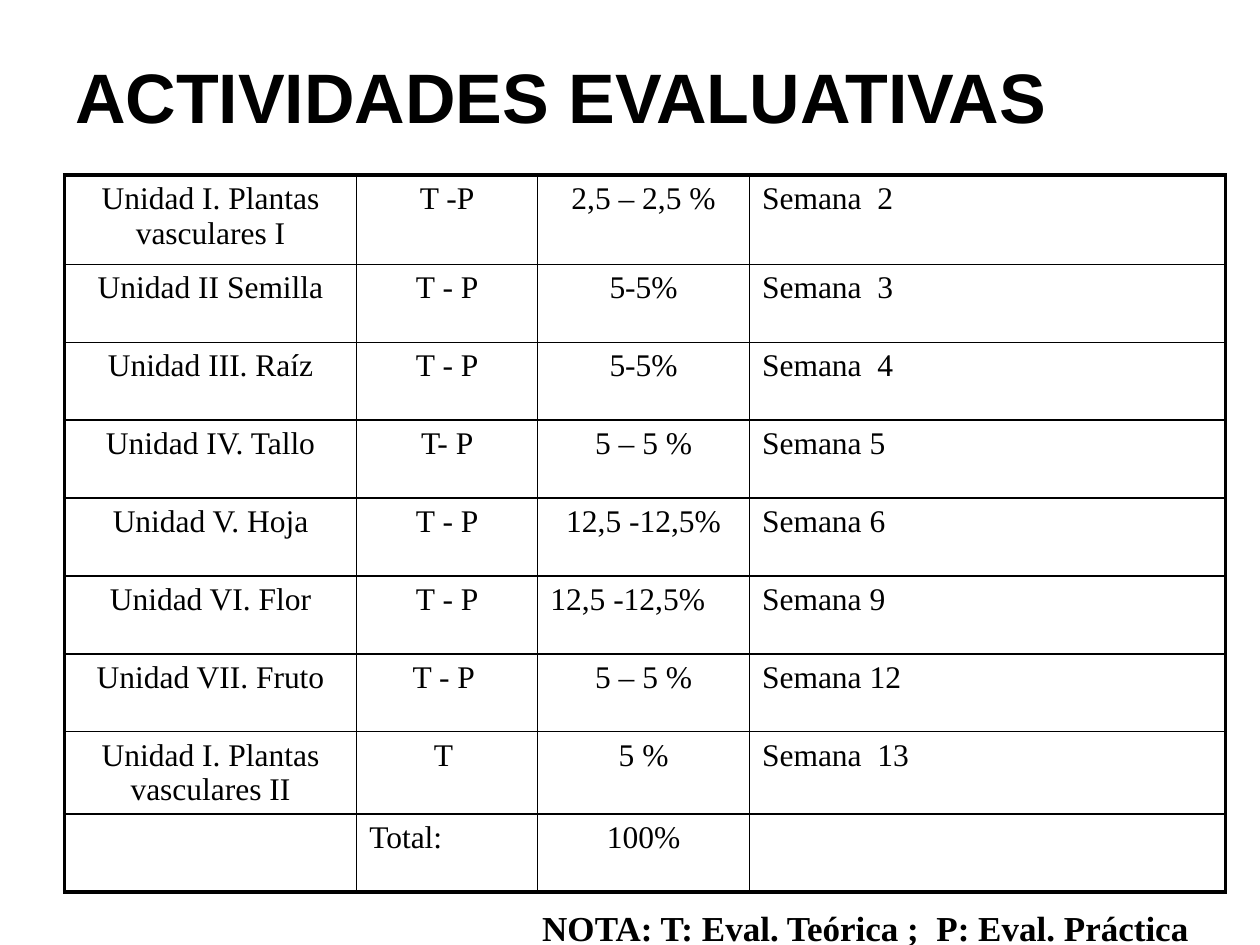
from lxml import etree
from pptx import Presentation
from pptx import util as u
from pptx.dml.color import RGBColor
from pptx.enum import text
from pptx.oxml.ns import qn

COLORS = {"ink": "000000"}
SERIF, SANS = "Times New Roman", "Arial"
LEFT, CENTER = text.PP_ALIGN.LEFT, text.PP_ALIGN.CENTER
THIN, THICK = u.Pt(1), u.Pt(2.25)

COLUMN_WIDTHS = [5.89, 3.65, 4.27, 9.6]
COLUMN_ALIGNS = [CENTER, CENTER, CENTER, LEFT]
FIRST_ROW_HEIGHT, ROW_HEIGHT = 1.8, 1.57
ACTIVITIES = [
    ("Unidad I. Plantas vasculares I", "T -P", "2,5 – 2,5 %", "Semana  2"),
    ("Unidad II Semilla", "T - P", "5-5%", "Semana  3"),
    ("Unidad III. Raíz", "T - P", "5-5%", "Semana  4"),
    ("Unidad IV. Tallo", "T- P", "5 – 5 %", "Semana 5"),
    ("Unidad V. Hoja", "T - P", "12,5 -12,5%", "Semana 6"),
    ("Unidad VI. Flor", "T - P", "12,5 -12,5%", "Semana 9"),
    ("Unidad VII. Fruto", "T - P ", "5 – 5 %", "Semana 12"),
    ("Unidad I. Plantas vasculares II", "T ", "5 %", "Semana  13"),
    ("", "Total:", "100%", ""),
]
LEFT_ALIGNED_CELLS = {(5, 2), (8, 1)}


def write(frame, words, font, size, align, bold=False):
    frame.text = words
    paragraph = frame.paragraphs[0]
    paragraph.alignment = align
    for run in paragraph.runs:
        run.font.name = font
        run.font.size = u.Pt(size)
        run.font.bold = bold
        run.font.color.rgb = RGBColor.from_string(COLORS["ink"])


def add_line_of_text(slide, box, words, font, size, align, anchor):
    frame = slide.shapes.add_textbox(*map(u.Cm, box)).text_frame
    frame.word_wrap = True
    frame.vertical_anchor = anchor
    write(frame, words, font, size, align, bold=True)


def set_borders(cell, widths):
    """Draw the cell's borders; widths maps L, R, T and B, in that order."""
    properties = cell._tc.get_or_add_tcPr()
    for side, width in widths.items():
        line = etree.SubElement(properties, qn(f"a:ln{side}"), w=str(width))
        fill = etree.SubElement(line, qn("a:solidFill"))
        etree.SubElement(fill, qn("a:srgbClr"), val=COLORS["ink"])


def add_activities_table(slide, left, top):
    last_row, last_column = len(ACTIVITIES) - 1, len(COLUMN_WIDTHS) - 1
    heights = [FIRST_ROW_HEIGHT] + [ROW_HEIGHT] * last_row
    table = slide.shapes.add_table(
        len(ACTIVITIES), len(COLUMN_WIDTHS), u.Cm(left), u.Cm(top),
        u.Cm(sum(COLUMN_WIDTHS)), u.Cm(sum(heights))).table
    table.first_row = table.horz_banding = False
    for column, width in zip(table.columns, COLUMN_WIDTHS):
        column.width = u.Cm(width)
    for row, height in zip(table.rows, heights):
        row.height = u.Cm(height)

    for r, activity in enumerate(ACTIVITIES):
        for c, words in enumerate(activity):
            cell = table.cell(r, c)
            align = LEFT if (r, c) in LEFT_ALIGNED_CELLS else COLUMN_ALIGNS[c]
            write(cell.text_frame, words, SERIF, 18, align)
            set_borders(cell, {
                "L": THICK if c == 0 else THIN,
                "R": THICK if c == last_column else THIN,
                "T": THICK if r == 0 else THIN,
                "B": THICK if r == last_row else THIN,
            })
            cell.fill.background()


def main():
    presentation = Presentation()
    presentation.slide_width, presentation.slide_height = u.Cm(25.4), u.Cm(19.05)
    slide = presentation.slides.add_slide(presentation.slide_layouts[6])
    add_activities_table(slide, 1.3, 3.53)
    add_line_of_text(slide, (1.27, 0.33, 22.86, 3.18), "ACTIVIDADES EVALUATIVAS",
                     SANS, 40, LEFT, text.MSO_ANCHOR.MIDDLE)
    add_line_of_text(slide, (9.5, 18.14, 15.9, 1.09),
                     "NOTA: T: Eval. Teórica ;  P: Eval. Práctica",
                     SERIF, 20, CENTER, text.MSO_ANCHOR.TOP)
    presentation.save("out.pptx")


if __name__ == "__main__":
    main()
